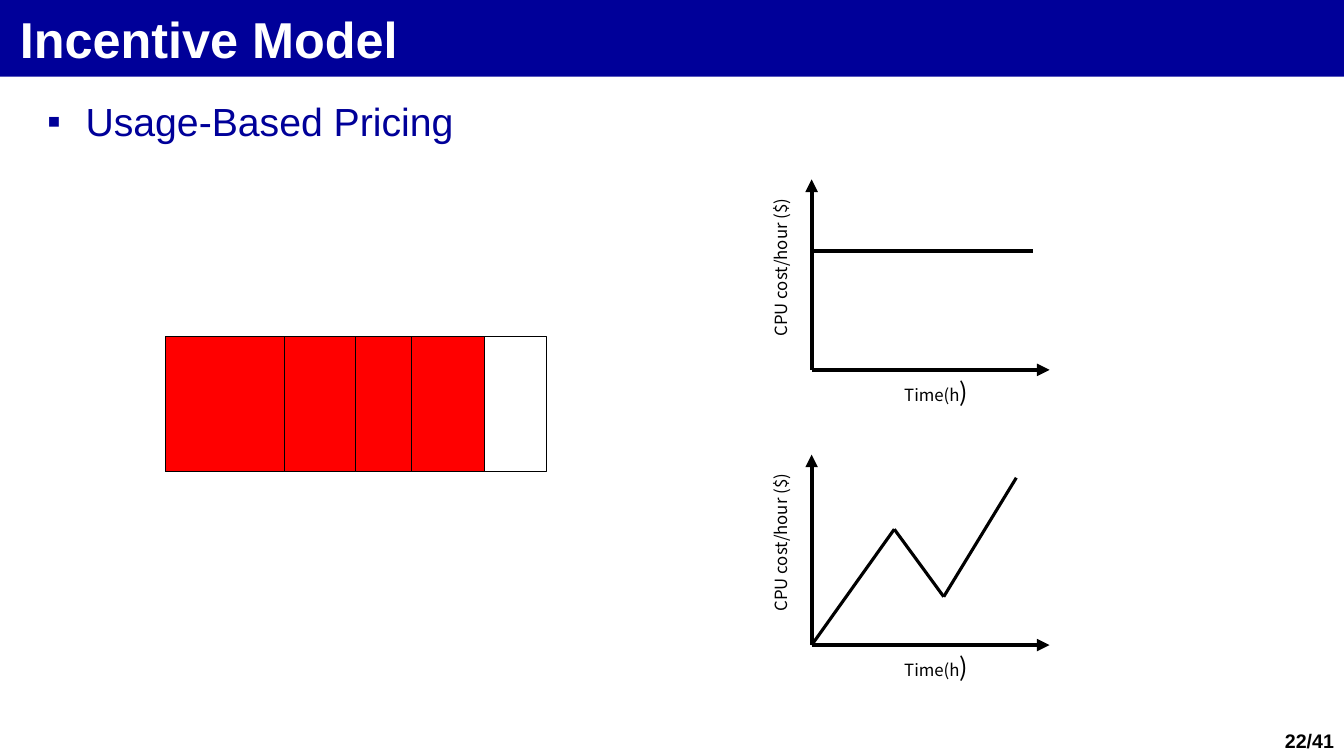
from dataclasses import dataclass
from itertools import pairwise

from lxml import etree
from pptx import Presentation
from pptx import util as u
from pptx.dml import color
from pptx.enum import shapes, text
from pptx.oxml import ns


@dataclass(frozen=True)
class Theme:
    navy: str = "000099"
    red: str = "FF0000"
    white: str = "FFFFFF"
    black: str = "000000"
    font: str = "Arial"
    chart_font: str = "Noto Sans CJK KR"
    title: int = 36
    body: int = 28
    paren: int = 18
    page: int = 14
    label: int = 12
    axis: float = 3
    curve: float = 2.25
    border: float = 0.75


T = Theme()
rgb = color.RGBColor.from_string


def inches(*values):
    return [u.Inches(v) for v in values]


def add_run(p, words, size, hue=T.black, font=T.font, bold=False):
    r = p.add_run()
    r.text = words
    r.font.size, r.font.name, r.font.bold = u.Pt(size), font, bold
    r.font.color.rgb = rgb(hue)


def write(s, words, box, align=text.PP_ALIGN.LEFT, anchor=text.MSO_ANCHOR.TOP,
          rotation=0, **style):
    """Add a text box and return its paragraph."""
    sp = s.shapes.add_textbox(*inches(*box))
    sp.rotation = rotation
    tf = sp.text_frame
    tf.word_wrap, tf.vertical_anchor = True, anchor
    p = tf.paragraphs[0]
    p.alignment = align
    add_run(p, words, **style)
    return p


def add_rect(s, box, fill, line=None):
    sp = s.shapes.add_shape(shapes.MSO_SHAPE.RECTANGLE, *inches(*box))
    sp.shadow.inherit = False
    sp.fill.solid()
    sp.fill.fore_color.rgb = rgb(fill)
    if line:
        sp.line.color.rgb = rgb(line)
        sp.line.width = u.Pt(T.border)
    else:
        sp.line.fill.background()
    return sp


def add_line(s, start, end, width, arrow=False):
    c = s.shapes.add_connector(shapes.MSO_CONNECTOR.STRAIGHT, *inches(*start, *end))
    c.line.color.rgb = rgb(T.black)
    c.line.width = u.Pt(width)
    if arrow:
        etree.SubElement(c.line._get_or_add_ln(), ns.qn("a:tailEnd"), type="triangle")
    etree.SubElement(c._element.spPr, ns.qn("a:effectLst"))


def title_bar(s, words, box):
    add_rect(s, box, T.navy)
    x, y, w, h = box
    write(s, words, (x + 0.1, y, w - 0.2, h), anchor=text.MSO_ANCHOR.MIDDLE,
          size=T.title, hue=T.white, bold=True)


def bullet_list(s, words, box):
    p = write(s, words, box, size=T.body, hue=T.navy)
    p.space_before = u.Pt(0.2 * T.body)
    pPr = p._p.get_or_add_pPr()
    indent = u.Inches(0.38)
    pPr.set("marL", str(indent))
    pPr.set("indent", str(-indent))
    etree.SubElement(pPr, ns.qn("a:buFont"), typeface=T.font)
    etree.SubElement(pPr, ns.qn("a:buChar"), char="▪")


def usage_bar(s, box, used):
    """Full capacity, then the used shares from widest to narrowest."""
    x, y, w, h = box
    add_rect(s, box, T.white, T.black)
    for share in used:
        add_rect(s, (x, y, share, h), T.red, T.black)


def cost_graph(s, box, curve):
    """Axes fill the box; curve points are offsets from the origin, y upward."""
    x, y, w, h = box
    base = y + h
    add_line(s, (x, base), (x + w, base), T.axis, arrow=True)
    add_line(s, (x, base), (x, y), T.axis, arrow=True)
    points = [(x + dx, base - dy) for dx, dy in curve]
    for start, end in pairwise(points):
        add_line(s, start, end, T.curve)
    p = write(s, "Time(h", (x + 0.82, base + 0.01, 1.57, 0.4),
              size=T.label, font=T.chart_font)
    add_run(p, ")", T.paren, font=T.chart_font)
    write(s, "CPU cost/hour ($)", (x - 1.13, y + 0.68, 1.65, 0.3), rotation=270,
          size=T.label, font=T.chart_font)


def page_number(s, words, box):
    write(s, words, box, align=text.PP_ALIGN.RIGHT, anchor=text.MSO_ANCHOR.MIDDLE,
          size=T.page, bold=True)


def main():
    prs = Presentation()
    prs.slide_width, prs.slide_height = inches(13.33, 7.5)
    s = prs.slides.add_slide(prs.slide_layouts[6])

    # Heading and text
    title_bar(s, "Incentive Model", (0, 0, 13.33, 0.76))
    bullet_list(s, "Usage-Based Pricing", (0.37, 0.92, 12.59, 6.14))

    # Capacity bar
    usage_bar(s, (1.64, 3.34, 3.78, 1.34), used=(3.17, 2.44, 1.89, 1.18))

    # Fixed price above, varying price below
    curves = [
        [(0, 1.18), (2.2, 1.18)],
        [(0, 0), (0.82, 1.15), (1.31, 0.48), (2.03, 1.66)],
    ]
    for row, curve in enumerate(curves):
        cost_graph(s, (8.05, 1.78 + 2.73 * row, 2.36, 1.89), curve)

    # Page number, flush with the right edge
    page_number(s, "22/41", (12.33, 7.19, 1, 0.31))
    prs.save("out.pptx")


if __name__ == "__main__":
    main()
